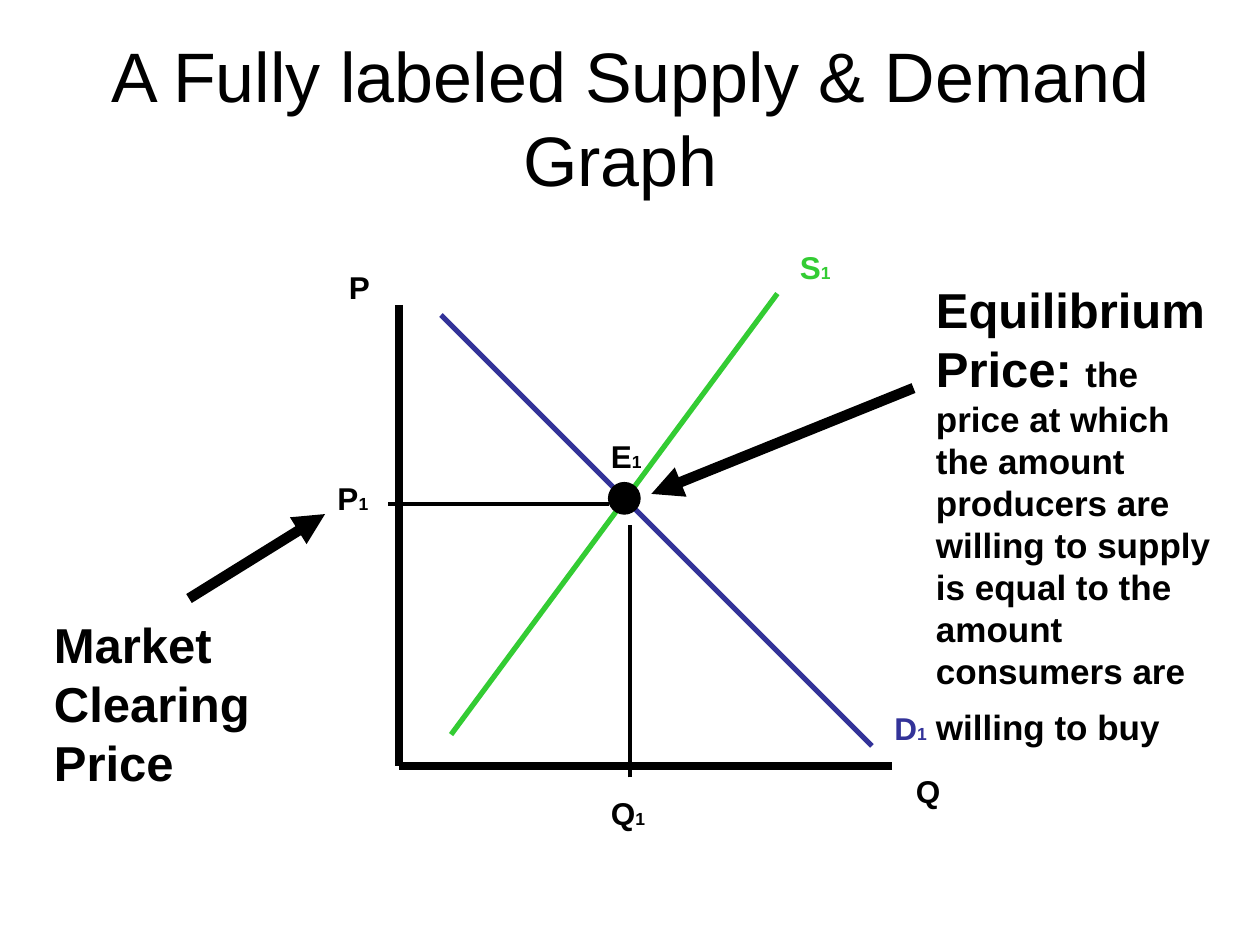
from dataclasses import dataclass
from lxml.etree import SubElement
from pptx import Presentation
from pptx.dml.color import RGBColor
from pptx.enum.shapes import MSO_CONNECTOR, MSO_SHAPE
from pptx.enum.text import MSO_ANCHOR, PP_ALIGN
from pptx.oxml.ns import qn
from pptx.util import Inches, Pt


@dataclass
class Theme:
    font: str = "Arial"
    ink: RGBColor = RGBColor(0, 0, 0)
    demand: RGBColor = RGBColor(0x33, 0x33, 0x99)
    supply: RGBColor = RGBColor(0x33, 0xCC, 0x33)
    title: int = 40
    head: int = 28
    body: int = 20
    label: int = 18
    sub: int = 10


theme = Theme()
deck = Presentation()
deck.slide_width, deck.slide_height = Inches(10), Inches(7.5)
slide = deck.slides.add_slide(deck.slide_layouts[5])
shapes = slide.shapes


def add_line(start, end, color, width, arrow=False):
    line = shapes.add_connector(MSO_CONNECTOR.STRAIGHT, *map(Inches, start + end))
    line.line.color.rgb = color
    line.line.width = Pt(width)
    if arrow:
        SubElement(line.line._get_or_add_ln(), qn("a:tailEnd"), type="triangle")
    SubElement(line._element.spPr, qn("a:effectLst"))


def add_text(box, parts, color):
    frame = shapes.add_textbox(*map(Inches, box)).text_frame
    frame.word_wrap = True
    para = frame.paragraphs[0]
    para.font.name = theme.font
    para.font.bold = True
    para.font.color.rgb = color
    for text, size in parts:
        run = para.add_run()
        run.text = text
        run.font.size = Pt(size)


title = shapes.title
title.left, title.top = Inches(0.5), Inches(0.3)
title.width, title.height = Inches(9), Inches(1.25)
title.text_frame.text = "A Fully labeled Supply & Demand Graph "
title.text_frame.word_wrap = True
title.text_frame.vertical_anchor = MSO_ANCHOR.MIDDLE
para = title.text_frame.paragraphs[0]
para.alignment = PP_ALIGN.CENTER
para.font.name = theme.font
para.font.size = Pt(theme.title)
para.font.color.rgb = theme.ink

for start, end, color, width in [
    ((3.17, 2.42), (3.17, 6.08), theme.ink, 4.5),
    ((7.08, 6.08), (3.17, 6.08), theme.ink, 4.5),
    ((3.5, 2.5), (6.92, 5.92), theme.demand, 3),
    ((3.58, 5.83), (6.17, 2.33), theme.supply, 3),
    ((3.08, 4), (4.83, 4), theme.ink, 2.25),
    ((5, 6.17), (5, 4.17), theme.ink, 2.25),
]:
    add_line(start, end, color, width)

dot = shapes.add_shape(MSO_SHAPE.OVAL, *map(Inches, (4.83, 3.83, 0.25, 0.25)))
dot.shadow.inherit = False
dot.fill.solid()
dot.fill.fore_color.rgb = theme.ink
dot.line.color.rgb = theme.ink
dot.line.width = Pt(0.75)

for start, end in [((7.25, 3.08), (5.17, 3.92)), ((1.5, 4.75), (2.58, 4.08))]:
    add_line(start, end, theme.ink, 6, arrow=True)

for name, left, top, color in [
    ("P", 2.67, 2.08, theme.ink),
    ("Q", 7.17, 6.08, theme.ink),
]:
    add_text((left, top, 0.42, 0.4), [(name, theme.label)], color)

for name, left, top, color in [
    ("D", 7, 5.58, theme.demand),
    ("S", 6.25, 1.92, theme.supply),
    ("P", 2.58, 3.75, theme.ink),
    ("Q", 4.75, 6.25, theme.ink),
    ("E", 4.75, 3.42, theme.ink),
]:
    add_text((left, top, 0.58, 0.4), [(name, theme.label), ("1", theme.sub)], color)

meaning = (
    "the price at which the amount producers are willing to supply "
    "is equal to the amount consumers are willing to buy"
)
add_text(
    (7.33, 2.17, 2.5, 3.7),
    [("Equilibrium Price: ", theme.head), (meaning, theme.body), (" ", theme.head)],
    theme.ink,
)
add_text((0.33, 4.83, 2.5, 1.5), [("Market Clearing Price", theme.head)], theme.ink)

deck.save("out.pptx")
